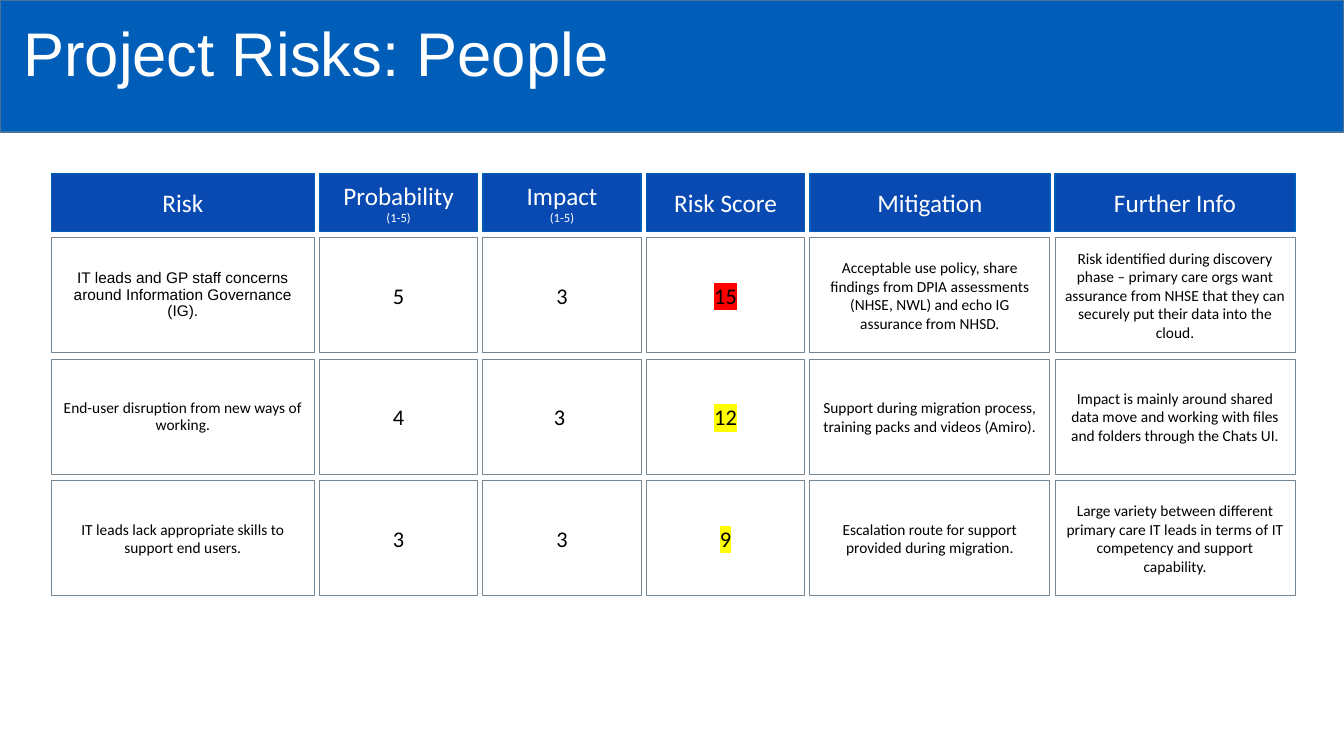
from lxml import etree
from pptx import Presentation
from pptx.dml.color import RGBColor
from pptx.enum.shapes import MSO_SHAPE
from pptx.enum.text import MSO_ANCHOR, MSO_AUTO_SIZE, PP_ALIGN
from pptx.oxml.ns import qn
from pptx.util import Pt

RECT = MSO_SHAPE.RECTANGLE
MIDDLE = MSO_ANCHOR.MIDDLE
NO_FIT = MSO_AUTO_SIZE.NONE
LEFT, CENTER = PP_ALIGN.LEFT, PP_ALIGN.CENTER

TITLE = "Project Risks: People"
HEADERS = [
    ["Risk"],
    ["Probability", "(1-5)"],
    ["Impact", "(1-5)"],
    ["Risk Score"],
    ["Mitigation"],
    ["Further Info"],
]
RISKS = [
    ("IT leads and GP staff concerns around Information Governance (IG).",
     "5", "3", "15",
     "Acceptable use policy, share findings from DPIA assessments (NHSE, NWL) "
     "and echo IG assurance from NHSD.",
     "Risk identified during discovery phase – primary care orgs want assurance "
     "from NHSE that they can securely put their data into the cloud."),
    ("End-user disruption from new ways of working.",
     "4", "3 ", "12",
     "Support during migration process, training packs and videos (Amiro).",
     "Impact is mainly around shared data move and working with files and folders "
     "through the Chats UI."),
    ("IT leads lack appropriate skills to support end users.",
     "3", "3", "9",
     "Escalation route for support provided during migration.",
     "Large variety between different primary care IT leads in terms of IT "
     "competency and support capability."),
]

THEME = {
    "band": "005EB8", "band_line": "43739E",
    "header": "094AB2", "header_line": "005EB8", "cell_line": "768692",
    "light": "FFFFFF", "dark": "000000",
    "high": "FF0000", "medium": "FFFF00",
    "title_font": "Arial", "font": "Calibri",
    "title_size": 44, "header_size": 18, "scale_size": 9,
    "score_size": 16, "text_size": 11,
}
SLIDE_W, SLIDE_H = 960, 540
BAND_H = 94.3
TITLE_BOX = (9.4, 1.4, 568, 78.5)
GRID_LEFT, COL_GAP = 36.7, 3.75
COL_WIDTHS = [187.8, 113, 113, 113, 171.4, 171.4]
HEADER_TOP, HEADER_H = 123.8, 41.8
ROWS_TOP, ROW_H, ROW_PITCH = 169.9, 82.1, 86.75
SCORE_COLS = (1, 2, 3)
RATING_COL = 3
HIGH_FROM = 15


def rgb(name):
    return RGBColor.from_string(THEME[name])


def place(s, box):
    for name, value in zip(("left", "top", "width", "height"), box):
        setattr(s, name, Pt(value))


def paint(s, line, width, fill=None):
    if fill:
        s.fill.solid()
        s.fill.fore_color.rgb = rgb(fill)
    else:
        s.fill.background()
    s.line.color.rgb = rgb(line)
    s.line.width = Pt(width)


def add_box(shapes, box, *style):
    s = shapes.add_shape(RECT, *map(Pt, box))
    s.shadow.inherit = False
    paint(s, *style)
    return s


def highlight(r, color):
    mark = etree.Element(qn("a:highlight"))
    etree.SubElement(mark, qn("a:srgbClr"), val=THEME[color])
    r.font.color.rgb = r.font.color.rgb
    r.font._element.find(qn("a:solidFill")).addnext(mark)


def write(s, lines, sizes, color, font="font", align=CENTER, spacing=1.0):
    tf = s.text_frame
    frame = {"word_wrap": True, "auto_size": NO_FIT, "vertical_anchor": MIDDLE}
    for name, value in frame.items():
        setattr(tf, name, value)
    for i, (line, size) in enumerate(zip(lines, sizes)):
        p = tf.paragraphs[0] if i == 0 else tf.add_paragraph()
        layout = {"alignment": align, "line_spacing": spacing, "space_before": Pt(0)}
        for name, value in layout.items():
            setattr(p, name, value)
        r = p.add_run()
        r.text = line
        look = {"name": THEME[font], "size": Pt(THEME[size])}
        for name, value in look.items():
            setattr(r.font, name, value)
        r.font.color.rgb = rgb(color)
    return tf.paragraphs[0]


def remove_bullet(p):
    pPr = p._p.get_or_add_pPr()
    pPr.set("marL", "0")
    pPr.set("indent", "0")
    etree.SubElement(pPr, qn("a:buNone"))


def main():
    prs = Presentation()
    prs.slide_width, prs.slide_height = Pt(SLIDE_W), Pt(SLIDE_H)
    slide = prs.slides.add_slide(prs.slide_layouts[1])
    shapes = slide.shapes
    title, body = shapes.title, slide.placeholders[1]

    band = add_box(shapes, (0, 0, SLIDE_W, BAND_H), "band_line", 1, "band")
    title.element.addprevious(band.element)
    place(title, TITLE_BOX)
    write(title, [TITLE], ["title_size"], "light", "title_font", LEFT, 0.9)

    lefts = [GRID_LEFT + sum(COL_WIDTHS[:c]) + c * COL_GAP
             for c in range(len(COL_WIDTHS))]

    for x, w, lines in zip(lefts, COL_WIDTHS, HEADERS):
        s = add_box(shapes, (x, HEADER_TOP, w, HEADER_H), "header_line", 1, "header")
        write(s, lines, ["header_size", "scale_size"], "light")

    for row, risk in enumerate(RISKS):
        y = ROWS_TOP + row * ROW_PITCH
        for col, (x, w, text) in enumerate(zip(lefts, COL_WIDTHS, risk)):
            box = (x, y, w, ROW_H)
            lead = row == col == 0
            if lead:
                s = body
                place(s, box)
                paint(s, "cell_line", 0.75)
            else:
                s = add_box(shapes, box, "cell_line", 0.75)
            size = "score_size" if col in SCORE_COLS else "text_size"
            font = "title_font" if lead else "font"
            spacing = 0.9 if col == 0 and row < 2 else 1.0
            p = write(s, [text], [size], "dark", font, CENTER, spacing)
            if lead:
                remove_bullet(p)
            if col == RATING_COL:
                highlight(p.runs[0], "high" if int(text) >= HIGH_FROM else "medium")

    prs.save("out.pptx")


if __name__ == "__main__":
    main()
